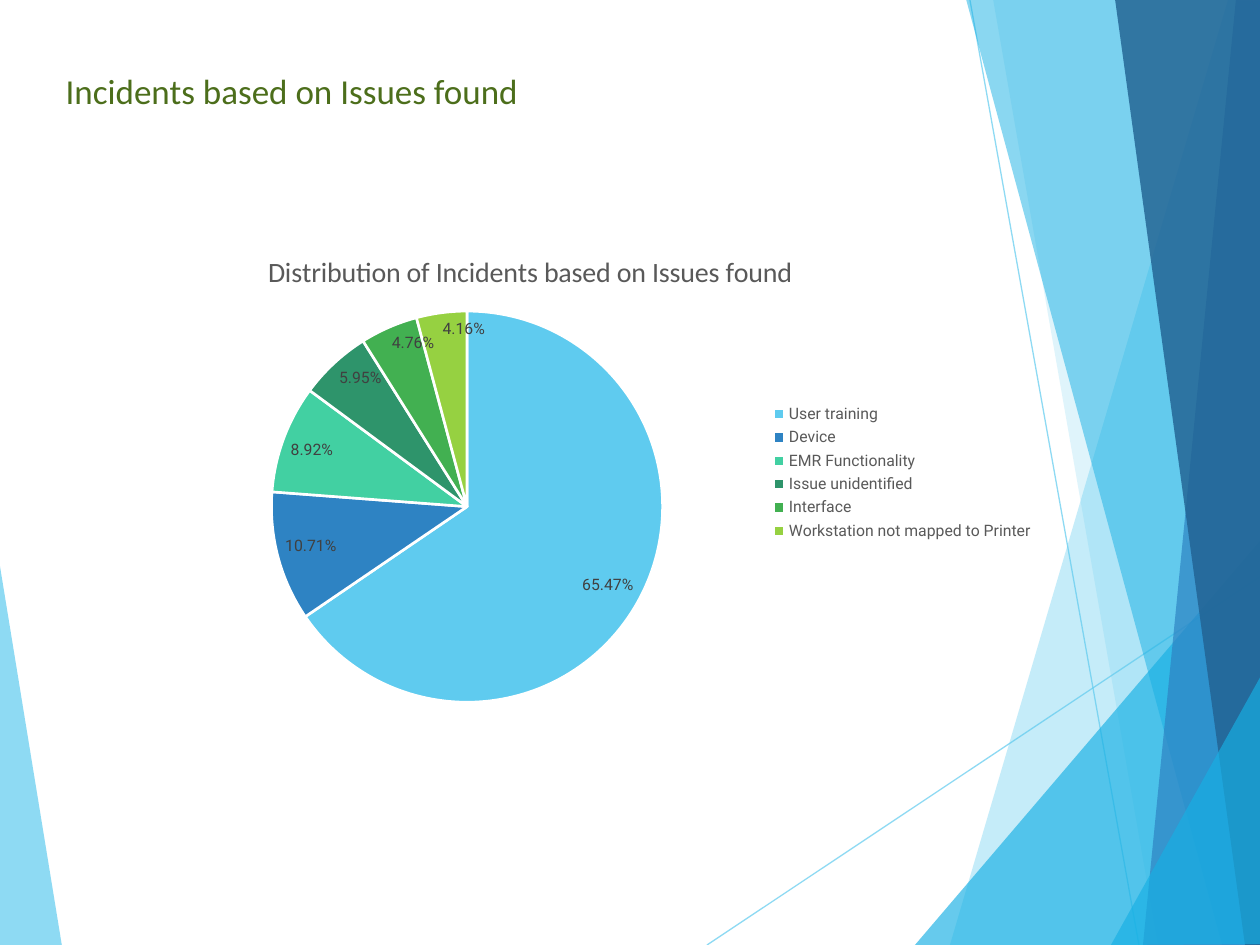
from lxml.etree import SubElement
from pptx import Presentation
from pptx.chart.data import CategoryChartData
from pptx.dml.color import RGBColor
from pptx.enum.chart import XL_CHART_TYPE, XL_LABEL_POSITION, XL_LEGEND_POSITION
from pptx.enum.shapes import MSO_CONNECTOR
from pptx.enum.text import MSO_ANCHOR, MSO_AUTO_SIZE, PP_ALIGN
from pptx.oxml import parse_xml
from pptx.oxml.ns import nsdecls, qn
from pptx.util import Pt

PX = 914400 / 126
COLORS = {
    "sky": "5FCBEF", "cyan": "17B0E4", "blue": "2E83C3", "navy": "226292",
    "mint": "42D0A2", "teal": "2E946B", "green": "42B051", "lime": "96D141",
    "title": "4C6E1B", "grey": "595959", "dark": "404040", "white": "FFFFFF",
}


def paint(fill, name, alpha=100):
    fill.solid()
    fill.fore_color.rgb = RGBColor.from_string(COLORS[name])
    if alpha < 100:
        color = fill._xPr.find(qn("a:solidFill"))[0]
        SubElement(color, qn("a:alpha"), val=str(alpha * 1000))


def style(font, face, size, name):
    font.name = face
    font.size = Pt(size)
    font.bold = False
    font.color.rgb = RGBColor.from_string(COLORS[name])


prs = Presentation()
prs.slide_width = round(1260 * PX)
prs.slide_height = round(945 * PX)
slide = prs.slides.add_slide(prs.slide_layouts[5])
shapes = slide.shapes

for x1, y1, x2, y2 in [(707, 945, 1261, 576), (970, 0, 1139, 945)]:
    line = shapes.add_connector(
        MSO_CONNECTOR.STRAIGHT, *[round(v * PX) for v in (x1, y1, x2, y2)])
    line.line.width = Pt(0.75)
    paint(line.line.fill, "sky", 70)
    SubElement(line._element.spPr, qn("a:effectLst"))

facets = [
    ("sky", 70, [(-1, 560), (62, 946), (-1, 945)]),
    ("sky", 36, [(1228, 0), (950, 945), (1262, 946), (1261, 1)]),
    ("sky", 20, [(993, -1), (1158, 945), (1261, 945), (1261, -1)]),
    ("cyan", 66, [(915, 945), (1260, 541), (1261, 945)]),
    ("cyan", 50, [(966, -1), (1222, 945), (1261, 944), (1261, -1)]),
    ("blue", 70, [(1236, -1), (1143, 945), (1261, 945), (1260, -1)]),
    ("navy", 82, [(1115, -1), (1245, 945), (1262, 945), (1260, -1)]),
    ("cyan", 66, [(1111, 945), (1262, 674), (1262, 944)]),
]
for name, alpha, points in facets:
    pen = shapes.build_freeform(*points[0], scale=PX)
    pen.add_line_segments(points[1:], close=True)
    facet = pen.convert_to_shape()
    facet.shadow.inherit = False
    facet.line.fill.background()
    paint(facet.fill, name, alpha)

title = shapes.title
title.left, title.top, title.width, title.height = [
    round(v * PX) for v in (53, 63, 483, 55)]
frame = title.text_frame
frame.text = "Incidents based on Issues found"
frame.word_wrap = False
frame.auto_size = MSO_AUTO_SIZE.SHAPE_TO_FIT_TEXT
frame.vertical_anchor = MSO_ANCHOR.TOP
frame.paragraphs[0].alignment = PP_ALIGN.LEFT
style(frame.paragraphs[0].runs[0].font, "Calibri", 20, "title")

issues = [
    ("User training", 65.47, "sky"),
    ("Device", 10.71, "blue"),
    ("EMR Functionality", 8.92, "mint"),
    ("Issue unidentified", 5.95, "teal"),
    ("Interface", 4.76, "green"),
    ("Workstation not mapped to Printer", 4.16, "lime"),
]
data = CategoryChartData()
data.categories = [issue[0] for issue in issues]
data.add_series("Series 1", [issue[1] for issue in issues])
chart = shapes.add_chart(
    XL_CHART_TYPE.PIE, *[round(v * PX) for v in (213, 228, 833, 489)], data).chart
style(chart.font, "Roboto", 10, "dark")

chart.has_title = True
head = chart.chart_title.text_frame
head.text = "Distribution of Incidents based on Issues found"
style(head.paragraphs[0].runs[0].font, "Calibri", 16, "grey")
chart.has_legend = True
chart.legend.position = XL_LEGEND_POSITION.RIGHT
chart.legend.include_in_layout = False
style(chart.legend.font, "Roboto", 9, "grey")

plot = chart.plots[0]
plot.vary_by_categories = True
for spot, (_, _, name) in enumerate(issues):
    slice_ = plot.series[0].points[spot].format
    paint(slice_.fill, name)
    paint(slice_.line.fill, "white")
    slice_.line.width = Pt(1.5)
plot.has_data_labels = True
labels = plot.data_labels
labels.show_value = True
labels.show_percentage = False
labels.number_format = '0.00"%"'
labels.number_format_is_linked = False
labels.position = XL_LABEL_POSITION.INSIDE_END
style(labels.font, "Roboto", 9, "dark")

places = [
    (chart.chart_title._element, {"x": 0.06, "y": 0.04}),
    (chart._chartSpace.chart.plotArea, {"x": 0.07, "y": 0.17, "w": 0.47, "h": 0.8}),
]
for part, sizes in places:
    for old in part.findall(qn("c:layout")):
        part.remove(old)
    layout = parse_xml(f"<c:layout {nsdecls('c')}><c:manualLayout/></c:layout>")
    manual = layout[0]
    if "w" in sizes:
        SubElement(manual, qn("c:layoutTarget"), val="inner")
    for key in "xy":
        SubElement(manual, qn(f"c:{key}Mode"), val="edge")
    for key, value in sizes.items():
        SubElement(manual, qn(f"c:{key}"), val=str(value))
    text = part.find(qn("c:tx"))
    part.insert(0 if text is None else 1, layout)

prs.save("out.pptx")
